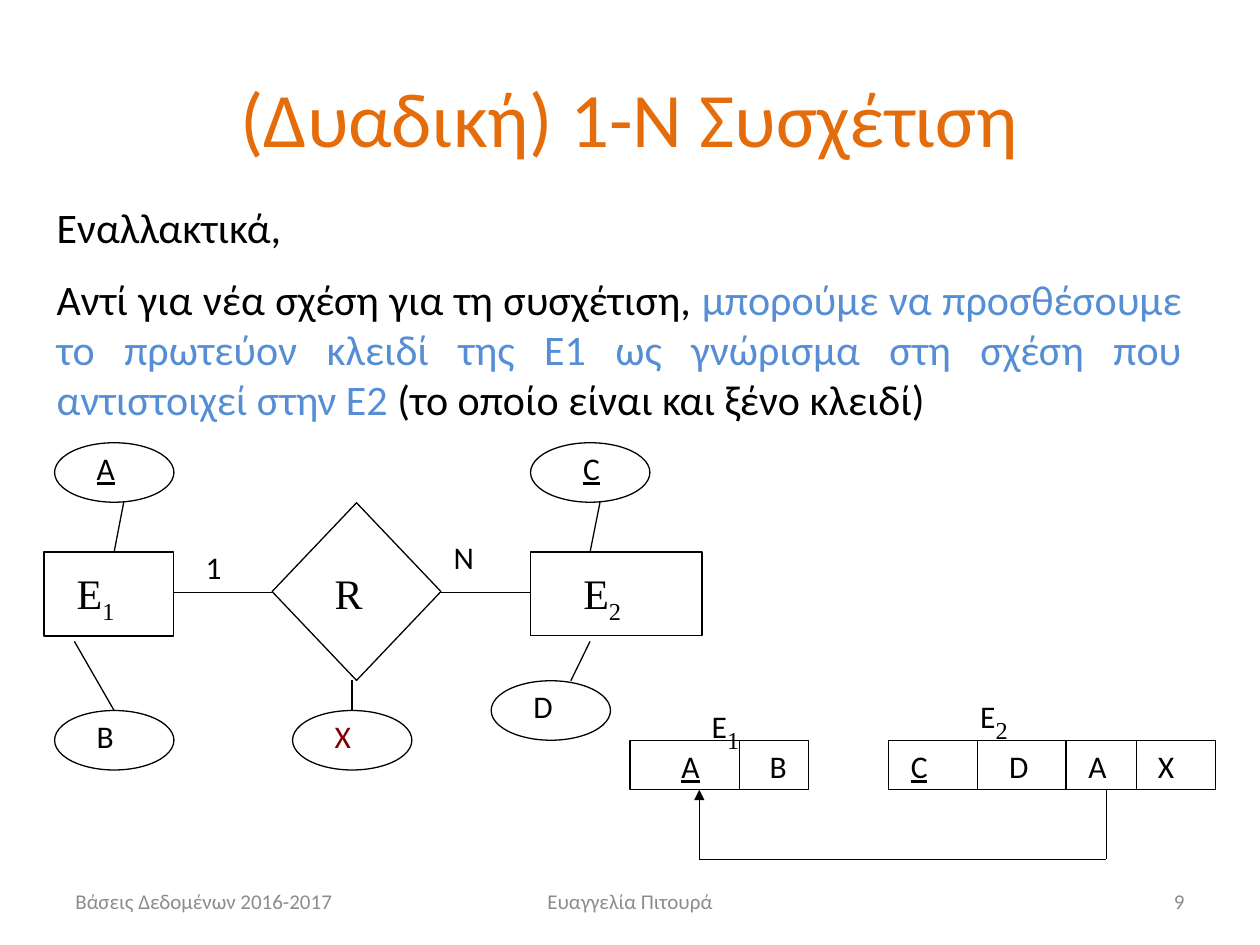
from lxml.etree import SubElement
from pptx import Presentation
from pptx.dml.color import RGBColor
from pptx.enum.shapes import MSO_CONNECTOR, MSO_SHAPE
from pptx.enum.text import MSO_ANCHOR, MSO_AUTO_SIZE, PP_ALIGN
from pptx.oxml.ns import qn
from pptx.util import Pt

COLORS = {
    "black": "000000",
    "title": "E46C0A",
    "highlight": "558ED5",
    "attribute": "800000",
    "footer": "8C8C8C",
}
SANS, SERIF = "Calibri", "Times New Roman"
OVAL_WIDTH, OVAL_HEIGHT = 68.2, 34
ROW_HEIGHT = 28


def format_run(run, size, color="black", font=SANS, underline=None):
    run.font.size = Pt(size)
    run.font.name = font
    run.font.color.rgb = RGBColor.from_string(COLORS[color])
    run.font.underline = underline


def place(shape, box):
    shape.left, shape.top, shape.width, shape.height = (Pt(value) for value in box)


def add_label(slide, box, text, subscript="", size=18, font=SANS, color="black",
              underline=None, align=PP_ALIGN.LEFT, anchor=MSO_ANCHOR.TOP):
    label = slide.shapes.add_textbox(*(Pt(value) for value in box))
    frame = label.text_frame
    frame.word_wrap = True
    frame.vertical_anchor = anchor
    frame.text = text
    paragraph = frame.paragraphs[0]
    paragraph.alignment = align
    format_run(paragraph.runs[0], size, color, font, underline)
    if subscript:
        run = paragraph.add_run()
        run.text = subscript
        format_run(run, 24, color, SERIF)
        run.font._element.set("baseline", "-25000")


def add_outline(slide, kind, box):
    shape = slide.shapes.add_shape(kind, *(Pt(value) for value in box))
    shape.shadow.inherit = False
    shape.fill.background()
    shape.line.color.rgb = RGBColor.from_string(COLORS["black"])
    shape.line.width = Pt(0.75)


def add_line(slide, start, end, arrow=False):
    line = slide.shapes.add_connector(
        MSO_CONNECTOR.STRAIGHT, *(Pt(value) for value in (*start, *end)))
    line.line.color.rgb = RGBColor.from_string(COLORS["black"])
    line.line.width = Pt(0.75)
    if arrow:
        SubElement(line.line._get_or_add_ln(), qn("a:tailEnd"), type="triangle")
    SubElement(line._element.spPr, qn("a:effectLst"))


def build_title(slide, box):
    title = slide.shapes.title
    place(title, box)
    title.text_frame.text = "(Δυαδική) 1-Ν Συσχέτιση"
    title.text_frame.auto_size = MSO_AUTO_SIZE.NONE
    title.text_frame.vertical_anchor = MSO_ANCHOR.MIDDLE
    paragraph = title.text_frame.paragraphs[0]
    paragraph.alignment = PP_ALIGN.CENTER
    format_run(paragraph.runs[0], 44, "title")


def build_body(slide, box):
    body = slide.placeholders[1]
    place(body, box)
    frame = body.text_frame
    frame.auto_size = MSO_AUTO_SIZE.NONE
    paragraphs = [
        [("Εναλλακτικά,", "black")],
        [("Αντί για νέα σχέση για τη συσχέτιση, ", "black"),
         ("μπορούμε να προσθέσουμε το πρωτεύον κλειδί της E1 ως γνώρισμα "
          "στη σχέση που αντιστοιχεί στην E2 ", "highlight"),
         ("(το οποίο είναι και ξένο κλειδί)", "black")],
    ]
    for index, parts in enumerate(paragraphs):
        paragraph = frame.add_paragraph() if index else frame.paragraphs[0]
        paragraph.alignment = PP_ALIGN.JUSTIFY
        paragraph.space_before = Pt(12 * index)
        properties = paragraph._p.get_or_add_pPr()
        properties.set("marL", "0")
        properties.set("indent", "0")
        SubElement(properties, qn("a:buNone"))
        for text, color in parts:
            run = paragraph.add_run()
            run.text = text
            format_run(run, 24, color)


def build_diagram(slide, box):
    left, top, width, height = box

    def at(x, y):
        return left + x, top + y

    # Entities and the relationship between them
    nodes = [
        (MSO_SHAPE.FLOWCHART_PROCESS, 0, 62.5, 73.8, 48, "E", "1", 11.5),
        (MSO_SHAPE.FLOWCHART_DECISION, 130.3, 34.3, 96.5, 101.5, "R", "", 159),
        (MSO_SHAPE.FLOWCHART_PROCESS, 278, 62.5, 98, 47.5, "E", "2", 301),
    ]
    for kind, x, y, node_width, node_height, name, subscript, text_x in nodes:
        add_outline(slide, kind, (*at(x, y), node_width, node_height))
        add_label(slide, (*at(text_x, 68), 68, 36), name, subscript, 24, SERIF)

    # Attributes: name, oval position, text inset, key, colour
    attributes = [
        ("A", 6, 0, 17, True, "black"),
        ("B", 6, 153, 17, None, "black"),
        ("X", 142, 153, 17, None, "attribute"),
        ("C", 278, 0, 23, True, "black"),
        ("D", 255.5, 136, 17, None, "black"),
    ]
    for name, x, y, inset, key, color in attributes:
        add_outline(slide, MSO_SHAPE.OVAL, (*at(x, y), OVAL_WIDTH, OVAL_HEIGHT))
        add_label(slide, (*at(x + inset, y), 45, 29), name, color=color, underline=key)

    # Links and cardinalities
    links = [
        (73.8, 85.4, 130.3, 85.4), (226.8, 85.4, 278, 85.4),
        (45.5, 34, 40, 62.5), (17.3, 113.5, 40, 153),
        (317.7, 34, 312, 62.5), (312, 113.5, 301, 136),
        (176, 135.8, 176, 153),
    ]
    for x1, y1, x2, y2 in links:
        add_line(slide, at(x1, y1), at(x2, y2))
    add_label(slide, (*at(85.3, 56.6), 45, 29), "1")
    add_label(slide, (*at(227, 50.8), 34, 29), "N")


def build_relation(slide, box, subscript, name_offset, columns, dividers):
    left, top, width, height = box
    add_outline(slide, MSO_SHAPE.RECTANGLE, box)
    name_x, name_y = name_offset
    add_label(slide, (left + name_x, top + name_y, 79, 29), "E", subscript)
    for name, x, key in columns:
        add_label(slide, (left + x, top, 40, 29), name, underline=key)
    for x in dividers:
        add_line(slide, (left + x, top), (left + x, top + height))


def build_foreign_key(slide, box):
    left, top, width, height = box
    right, bottom = left + width, top + height
    corners = [(right, top), (right, bottom), (left, bottom), (left, top)]
    for index, (start, end) in enumerate(zip(corners, corners[1:])):
        add_line(slide, start, end, arrow=index == 2)


def build_footer(slide, box):
    left, top, width, height = box
    parts = [
        ("Βάσεις Δεδομένων 2016-2017", 0, 168, PP_ALIGN.LEFT),
        ("Ευαγγελία Πιτουρά", 210, 228, PP_ALIGN.CENTER),
        ("9", width - 168, 168, PP_ALIGN.RIGHT),
    ]
    for text, x, part_width, align in parts:
        add_label(slide, (left + x, top, part_width, height), text, size=12,
                  color="footer", align=align, anchor=MSO_ANCHOR.MIDDLE)


def main():
    presentation = Presentation()
    presentation.slide_width, presentation.slide_height = Pt(720), Pt(540)
    slide = presentation.slides.add_slide(presentation.slide_layouts[1])
    build_title(slide, (36, 21.5, 648, 90))
    build_body(slide, (25.2, 111.6, 657.4, 140))
    build_diagram(slide, (25.2, 253, 376, 187))
    build_relation(slide, (360, 423.3, 102, ROW_HEIGHT), "1", (39.6, -28.8),
                   [("A", 22.3, True), ("B", 72.7, None)], [62.6])
    build_relation(slide, (507.6, 423.3, 187, ROW_HEIGHT), "2", (45.4, -34.5),
                   [("C", 5.8, True), ("D", 62, None), ("A", 107.3, None),
                    ("X", 147, None)], [51, 101.5, 141.8])
    build_foreign_key(slide, (399.6, 451.3, 232.6, 39.7))
    build_footer(slide, (36, 500.5, 648, 28.8))
    presentation.save("out.pptx")


if __name__ == "__main__":
    main()
